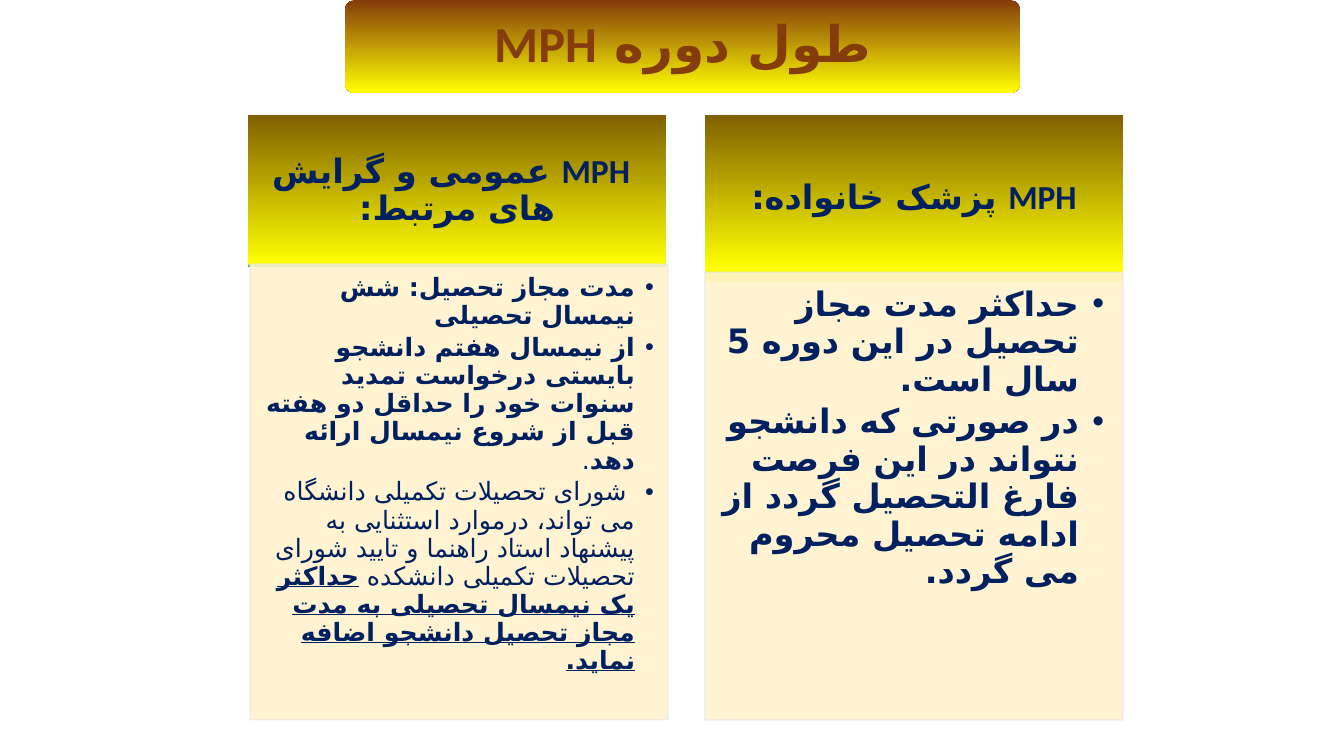
from copy import deepcopy

from lxml import etree
from pptx import Presentation
from pptx.dml.color import RGBColor
from pptx.enum.shapes import MSO_SHAPE
from pptx.enum.text import MSO_ANCHOR, PP_ALIGN
from pptx.oxml.ns import qn
from pptx.util import Emu, Pt

RECTANGLE = MSO_SHAPE.RECTANGLE
ROUNDED = MSO_SHAPE.ROUNDED_RECTANGLE
TOP, MIDDLE = MSO_ANCHOR.TOP, MSO_ANCHOR.MIDDLE
CENTER, RIGHT = PP_ALIGN.CENTER, PP_ALIGN.RIGHT

FONT = "Calibri"
PERSIAN_FONT = "DejaVu Sans"
BULLET_FONT = "Arial"
COLORS = {
    "brown": "843C0B",
    "olive": "806000",
    "yellow": "FFFF00",
    "green": "00B050",
    "navy": "002060",
    "cream": "FFF2CC",
    "border": "D2DEEF",
}
COLUMN_WIDTH = 418
HEADER_TOP = 115

COLUMNS = [
    {
        "header": " MPH عمومی و گرایش های مرتبط:",
        "header_box": (248, HEADER_TOP, COLUMN_WIDTH, 152),
        "stops": [(0, "olive"), (0.98, "yellow"), (1, "green")],
        "panel_box": (250, 264, COLUMN_WIDTH, 456),
        "insets": (10, 10, 14, 16),
        "size": 18,
        "indent": 19,
        "bullets": [
            [("مدت مجاز تحصیل: شش نیمسال تحصیلی", True, False)],
            [
                ("از نیمسال هفتم دانشجو بایستی درخواست تمدید سنوات خود را "
                 "حداقل دو هفته قبل از شروع نیمسال ارائه دهد", True, False),
                (".", False, False),
            ],
            [
                (" شورای تحصیلات تکمیلی دانشگاه می تواند، درموارد استثنایی "
                 "به پیشنهاد استاد راهنما و تایید شورای تحصیلات تکمیلی "
                 "دانشکده ", False, False),
                ("حداکثر یک نیمسال تحصیلی به مدت مجاز تحصیل دانشجو "
                 "اضافه نماید.", True, True),
            ],
        ],
    },
    {
        "header": "MPH پزشک خانواده:",
        "header_box": (705, HEADER_TOP, COLUMN_WIDTH, 167),
        "stops": [(0, "olive"), (0.92, "yellow"), (1, "yellow")],
        "panel_box": (705, 272, COLUMN_WIDTH, 448),
        "insets": (14, 14, 19, 21),
        "size": 24,
        "indent": 25,
        "bullets": [
            [("حداکثر مدت مجاز تحصیل در این دوره 5 سال است.", True, False)],
            [("در صورتی که دانشجو نتواند در این فرصت فارغ التحصیل گردد از "
              "ادامه تحصیل محروم می گردد.", True, False)],
        ],
    },
]


def px(value):
    return Emu(round(value * 914400 / 100.8))


def rgb(name):
    return RGBColor.from_string(COLORS[name])


class SlideBuilder:
    def __init__(self, presentation):
        self.slide = presentation.slides.add_slide(presentation.slide_layouts[6])

    def box(self, kind, bounds, insets, anchor):
        shape = self.slide.shapes.add_shape(kind, *map(px, bounds))
        shape.shadow.inherit = False
        frame = shape.text_frame
        frame.word_wrap = True
        frame.vertical_anchor = anchor
        frame.margin_left, frame.margin_top, frame.margin_right, frame.margin_bottom = map(px, insets)
        return shape

    def style(self, paragraph, size, color, align, bold, spacing):
        paragraph.alignment = align
        paragraph.line_spacing = spacing
        font = paragraph.font
        font.name = FONT
        font.size = Pt(size)
        font.bold = bold
        font.color.rgb = rgb(color)
        properties = paragraph._p.get_or_add_pPr()
        properties.set("rtl", "1")
        defaults = properties.find(qn("a:defRPr"))
        etree.SubElement(defaults, qn("a:cs")).set("typeface", PERSIAN_FONT)

    def banner(self, kind, bounds, insets, stops, text, size, color):
        shape = self.box(kind, bounds, insets, MIDDLE)
        shape.line.fill.background()
        shape.fill.gradient()
        shape.fill.gradient_angle = 270
        stop_list = next(shape._element.spPr.iter(qn("a:gsLst")))
        while len(stop_list) < len(stops):
            stop_list.append(deepcopy(stop_list[-1]))
        for stop, (position, name) in zip(shape.fill.gradient_stops, stops):
            stop.position = position
            stop.color.rgb = rgb(name)
        paragraph = shape.text_frame.paragraphs[0]
        paragraph.add_run().text = text
        self.style(paragraph, size, color, CENTER, True, 0.9)
        return shape

    def panel(self, bounds, insets, bullets, size, indent):
        shape = self.box(RECTANGLE, bounds, insets, TOP)
        shape.fill.solid()
        shape.fill.fore_color.rgb = rgb("cream")
        shape.line.color.rgb = rgb("border")
        shape.line.width = Pt(0.5)
        for color in shape._element.spPr.iter(qn("a:srgbClr")):
            etree.SubElement(color, qn("a:alpha")).set("val", "90000")
        frame = shape.text_frame
        for index, runs in enumerate(bullets):
            paragraph = frame.paragraphs[0] if index == 0 else frame.add_paragraph()
            self.bullet(paragraph, runs, size, indent)

    def bullet(self, paragraph, runs, size, indent):
        paragraph.level = 1
        properties = paragraph._p.get_or_add_pPr()
        properties.set("marL", str(px(indent)))
        properties.set("indent", str(-px(indent)))
        etree.SubElement(properties, qn("a:buFont")).set("typeface", BULLET_FONT)
        etree.SubElement(properties, qn("a:buChar")).set("char", "•")
        self.style(paragraph, size, "navy", RIGHT, runs[0][1], 0.93)
        paragraph.space_after = Pt(size * 0.15)
        for text, bold, underline in runs:
            run = paragraph.add_run()
            run.text = text
            if len(runs) > 1:
                run.font.bold = bold
                run.font.underline = underline


def main():
    presentation = Presentation()
    presentation.slide_width = px(1344)
    presentation.slide_height = px(756)
    builder = SlideBuilder(presentation)
    title = builder.banner(ROUNDED, (345, 0, 675, 93), (18, 18, 18, 18),
                           [(0, "brown"), (1, "yellow")], "طول دوره MPH", 36, "brown")
    title.adjustments[0] = 0.1
    for column in COLUMNS:
        builder.banner(RECTANGLE, column["header_box"], (19, 11, 19, 11),
                       column["stops"], column["header"], 24, "navy")
        builder.panel(column["panel_box"], column["insets"], column["bullets"],
                      column["size"], column["indent"])
    presentation.save("out.pptx")


if __name__ == "__main__":
    main()
